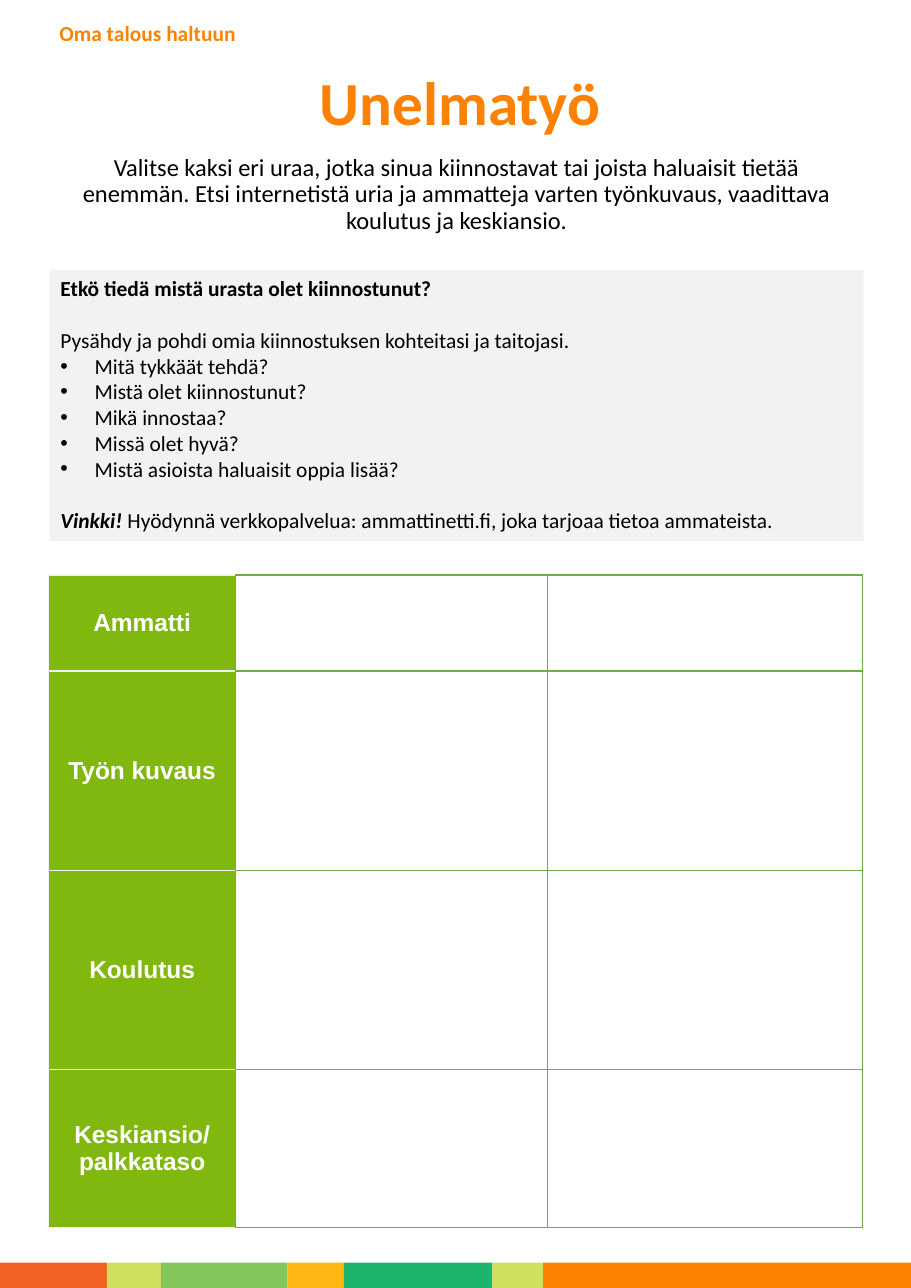
"""Build the Unelmatyö worksheet: intro, question panel, career table and colour strip."""
from itertools import pairwise
from lxml.etree import SubElement
from pptx import Presentation
from pptx.dml.color import RGBColor
from pptx.enum.shapes import MSO_SHAPE
from pptx.enum.text import MSO_ANCHOR, PP_ALIGN
from pptx.oxml import parse_xml
from pptx.oxml.ns import nsdecls, qn
from pptx.util import Pt

PX = 9144
THEME = {
    "body": "Calibri", "label": "Arial",
    "black": "000000", "white": "FFFFFF", "orange": "FD8204",
    "panel": "F2F2F2", "green": "81B810", "grid": "70AD47",
    "strip": ["F16122", "D0DF5D", "82C55B", "FDB614", "1DB46C", "D0DF5D", "FD8204"],
    "title": 40, "lead": 16, "text": 14,
}


def style(para, size, color, bold=False, face="body"):
    font = para.font
    font.name, font.size, font.bold = THEME[face], Pt(THEME[size]), bold
    font.color.rgb = RGBColor.from_string(THEME[color])


def block(x, y, w, h, color):
    rect = slide.shapes.add_shape(MSO_SHAPE.RECTANGLE, x * PX, y * PX, w * PX, h * PX)
    rect.shadow.inherit = False
    rect.fill.solid()
    rect.fill.fore_color.rgb = RGBColor.from_string(color)
    rect.line.fill.background()
    return rect


deck = Presentation()
deck.slide_width, deck.slide_height = 827 * PX, 1169 * PX
slide = deck.slides.add_slide(deck.slide_layouts[6])

lead = ("Valitse kaksi eri uraa, jotka sinua kiinnostavat tai joista haluaisit tietää "
        "enemmän. Etsi internetistä uria ja ammatteja varten työnkuvaus, vaadittava "
        "koulutus ja keskiansio.")
heads = [
    (44, 2, 252, 59, "Oma talous haltuun", "text", "orange", True, PP_ALIGN.LEFT, MSO_ANCHOR.MIDDLE),
    (48, 61, 739, 96, "Unelmatyö", "title", "orange", True, PP_ALIGN.CENTER, MSO_ANCHOR.TOP),
    (45, 136, 739, 96, lead, "lead", "black", False, PP_ALIGN.CENTER, MSO_ANCHOR.TOP),
]
for x, y, w, h, text, size, color, bold, align, anchor in heads:
    frame = slide.shapes.add_textbox(x * PX, y * PX, w * PX, h * PX).text_frame
    frame.word_wrap, frame.vertical_anchor = True, anchor
    para = frame.paragraphs[0]
    para.text, para.alignment, para.line_spacing = text, align, 0.9
    style(para, size, color, bold)

frame = block(45, 245, 739, 246, THEME["panel"]).text_frame
frame.word_wrap, frame.vertical_anchor = True, MSO_ANCHOR.TOP
ask = "Etkö tiedä mistä urasta olet kiinnostunut?"
think = "Pysähdy ja pohdi omia kiinnostuksen kohteitasi ja taitojasi."
points = ["Mitä tykkäät tehdä?", "Mistä olet kiinnostunut?", "Mikä innostaa?",
          "Missä olet hyvä?", "Mistä asioista haluaisit oppia lisää?"]
frame.text = "\n".join([ask, think, *points])
for para in frame.paragraphs:
    para.alignment = PP_ALIGN.LEFT
    if para.text in points:
        props = para._p.get_or_add_pPr()
        props.set("marL", str(31 * PX))
        props.set("indent", str(-31 * PX))
        SubElement(props, qn("a:buFont"), typeface="Arial")
        SubElement(props, qn("a:buChar"), char="•")
    elif para.text == think:
        para.space_before = Pt(17)
    style(para, "text", "black", para.text == ask)

tip = frame.add_paragraph()
tip.alignment, tip.space_before = PP_ALIGN.LEFT, Pt(17)
style(tip, "text", "black")
for text, strong in [("Vinkki! ", True),
                     ("Hyödynnä verkkopalvelua: ammattinetti.fi, joka tarjoaa tietoa ammateista.", False)]:
    run = tip.add_run()
    run.text, run.font.bold, run.font.italic = text, strong, strong

labels = ["Ammatti", "Työn kuvaus", "Koulutus", "Keskiansio/\npalkkataso"]
wide, high = [170, 283, 286], [87, 181, 181, 143]
table = slide.shapes.add_table(4, 3, 44 * PX, 522 * PX, sum(wide) * PX, sum(high) * PX).table
table.first_row = table.horz_banding = False
for col, w in zip(table.columns, wide):
    col.width = w * PX
for row, h, label in zip(table.rows, high, labels):
    row.height = h * PX
    for at, cell in enumerate(row.cells):
        if at == 0:
            cell.text, cell.vertical_anchor = label, MSO_ANCHOR.MIDDLE
            cell.fill.solid()
            cell.fill.fore_color.rgb = RGBColor.from_string(THEME["green"])
            for para in cell.text_frame.paragraphs:
                para.alignment = PP_ALIGN.CENTER
                style(para, "lead", "white", True, "label")
        else:
            cell.fill.background()
        props = cell._tc.get_or_add_tcPr()
        for spot, side in enumerate("LRTB"):
            tone = THEME["panel" if at == 0 and side != "R" else "grid"]
            props.insert(spot, parse_xml(
                f'<a:ln{side} {nsdecls("a")} w="12700"><a:solidFill>'
                f'<a:srgbClr val="{tone}"/></a:solidFill></a:ln{side}>'))

edges = [0, 97, 146, 261, 312, 447, 493, 827]
for (left, right), color in zip(pairwise(edges), THEME["strip"]):
    block(left, 1146, right - left, 23, color)

deck.save("out.pptx")
